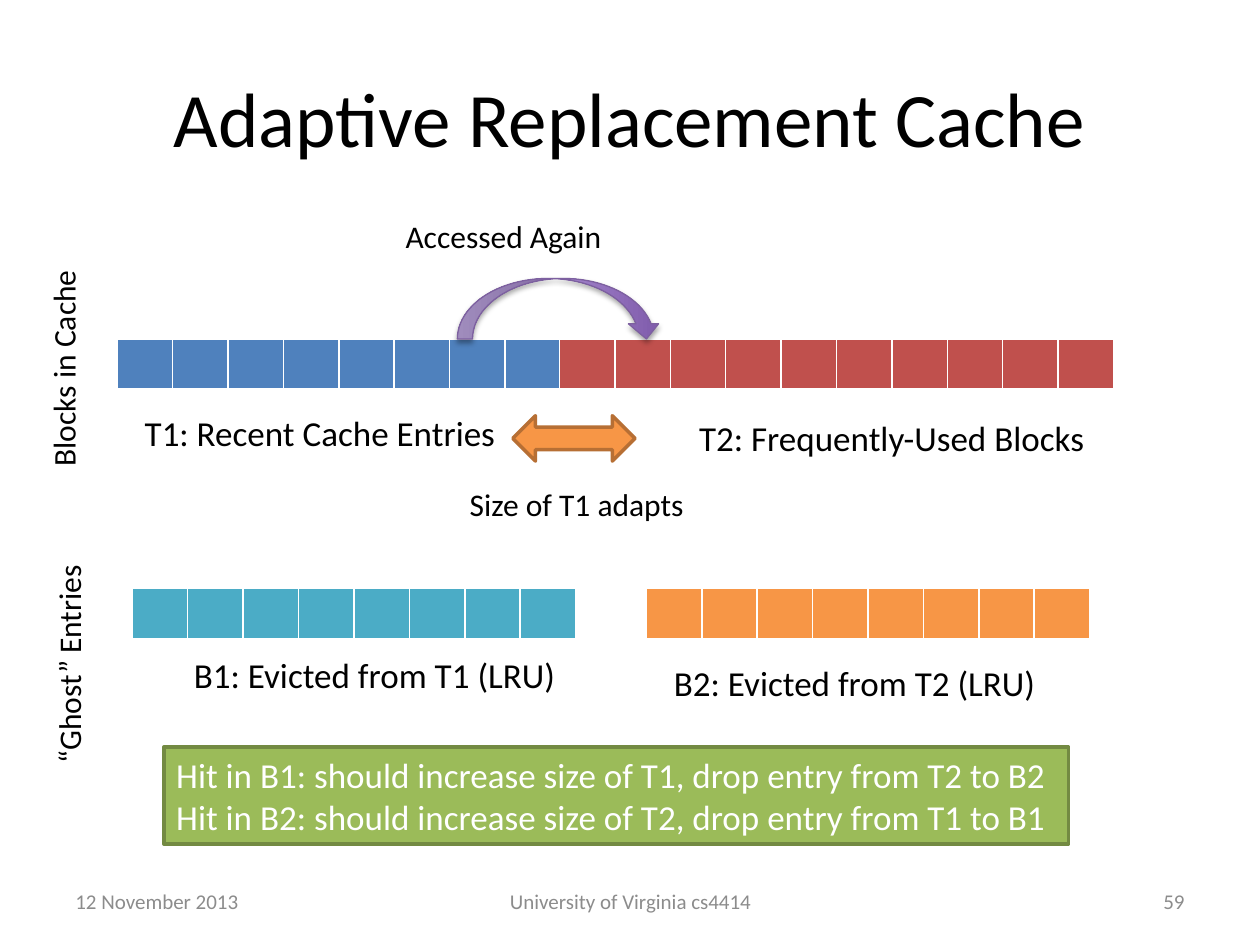
from lxml.etree import SubElement
from pptx import Presentation
from pptx.dml.color import RGBColor
from pptx.enum.shapes import MSO_SHAPE
from pptx.enum.text import MSO_ANCHOR, MSO_AUTO_SIZE, PP_ALIGN
from pptx.oxml import parse_xml
from pptx.oxml.ns import nsdecls, qn
from pptx.util import Inches, Pt

FONT = "Calibri"
BLACK, WHITE, GREY = "000000", "FFFFFF", "8C8C8C"
BLUE, RED, TEAL, ORANGE = "4F81BD", "C0504D", "4BACC6", "F79646"
CELL_W, CELL_H = 0.44, 0.41


def rgb(code):
    return RGBColor.from_string(code)


def style(par, size, color=BLACK, align=PP_ALIGN.LEFT):
    par.alignment = align
    par.font.name = FONT
    par.font.size = Pt(size)
    par.font.color.rgb = rgb(color)


def label(slide, box, text, size, turn=0):
    """Add a one-line label that fits its text."""
    shape = slide.shapes.add_textbox(*map(Inches, box))
    shape.rotation = turn
    frame = shape.text_frame
    frame.word_wrap = False
    frame.auto_size = MSO_AUTO_SIZE.SHAPE_TO_FIT_TEXT
    frame.text = text
    style(frame.paragraphs[0], size)


def edge(cell):
    props = cell._tc.get_or_add_tcPr()
    for side, width in (("L", 1), ("R", 1), ("T", 1), ("B", 3)):
        line = SubElement(props, qn(f"a:ln{side}"), w=str(Pt(width)))
        fill = SubElement(line, qn("a:solidFill"))
        SubElement(fill, qn("a:srgbClr"), val=WHITE)


def blocks(slide, left, top, count, color):
    """Add a row of equal cache blocks."""
    box = (left, top, CELL_W * count, CELL_H)
    table = slide.shapes.add_table(1, count, *map(Inches, box)).table
    for col in table.columns:
        col.width = Inches(CELL_W)
    for cell in table.iter_cells():
        edge(cell)
        cell.fill.solid()
        cell.fill.fore_color.rgb = rgb(color)


def solid(slide, kind, box, fill, line):
    shape = slide.shapes.add_shape(kind, *map(Inches, box))
    shape.shadow.inherit = False
    shape.fill.solid()
    shape.fill.fore_color.rgb = rgb(fill)
    shape.line.color.rgb = rgb(line)
    shape.line.width = Pt(2)
    return shape


def curve(slide, box):
    """Add the curved arrow from T1 to T2."""
    shape = slide.shapes.add_shape(MSO_SHAPE.CURVED_RIGHT_ARROW, *map(Inches, box))
    shape.rotation = 270
    shape.fill.gradient()
    shape.fill.gradient_angle = 90
    for stop, color in zip(shape.fill.gradient_stops, ("7F5BAB", "C8B0ED")):
        stop.color.rgb = rgb(color)
    shape.line.color.rgb = rgb("7D60A0")
    shape.line.width = Pt(0.75)
    shape.shadow.inherit = False
    props = shape._element.spPr
    props.find(qn("a:xfrm")).set("flipH", "1")
    props.find(qn("a:effectLst")).append(parse_xml(
        f'<a:outerShdw {nsdecls("a")} blurRad="{Pt(3.1)}" dist="{Pt(1.8)}" '
        'dir="5400000" rotWithShape="0"><a:srgbClr val="000000">'
        '<a:alpha val="35000"/></a:srgbClr></a:outerShdw>'))


def heading(slide, box, text):
    title = slide.shapes.title
    title.left, title.top, title.width, title.height = map(Inches, box)
    title.text_frame.text = text
    title.text_frame.vertical_anchor = MSO_ANCHOR.MIDDLE
    style(title.text_frame.paragraphs[0], 44, align=PP_ALIGN.CENTER)


def cache(slide, left, top):
    blocks(slide, left, top, 8, BLUE)
    blocks(slide, left + 3.51, top, 10, RED)
    label(slide, (left + 0.12, top + 0.53, 3.02, 0.44), "T1: Recent Cache Entries", 20)
    label(slide, (left + 4.52, top + 0.57, 3.3, 0.44), "T2: Frequently-Used Blocks", 20)
    label(slide, (left + 2.19, top - 1.02, 1.78, 0.4), "Accessed Again", 18)
    curve(slide, (left + 3.27, top - 1.05, 0.48, 1.62))
    solid(slide, MSO_SHAPE.LEFT_RIGHT_ARROW, (left + 3.14, top + 0.61, 0.97, 0.36),
          ORANGE, "B76F34")
    label(slide, (left + 2.7, top + 1.11, 1.93, 0.4), "Size of T1 adapts", 18)
    label(slide, (left - 1.32, top + 0.02, 1.78, 0.4), "Blocks in Cache", 18, 270)


def ghosts(slide, left, top):
    blocks(slide, left, top, 8, TEAL)
    blocks(slide, left + 4.08, top, 8, ORANGE)
    label(slide, (left + 0.39, top + 0.47, 3.11, 0.44), "B1: Evicted from T1 (LRU)", 20)
    label(slide, (left + 4.2, top + 0.53, 3.11, 0.44), "B2: Evicted from T2 (LRU)", 20)
    label(slide, (left - 1.4, top + 0.39, 1.79, 0.4), "“Ghost” Entries", 18, 270)


def rules(slide, box):
    shape = solid(slide, MSO_SHAPE.RECTANGLE, box, "9BBB59", "738A42")
    frame = shape.text_frame
    frame.word_wrap = False
    frame.auto_size = MSO_AUTO_SIZE.SHAPE_TO_FIT_TEXT
    frame.vertical_anchor = MSO_ANCHOR.TOP
    frame.text = ("Hit in B1: should increase size of T1, drop entry from T2 to B2\n"
                  "Hit in B2: should increase size of T2, drop entry from T1 to B1")
    for par in frame.paragraphs:
        style(par, 20, WHITE)


def footer(slide, top):
    for left, width, text, align in (
        (0.5, 2.33, "12 November 2013", PP_ALIGN.LEFT),
        (3.42, 3.17, "University of Virginia cs4414", PP_ALIGN.CENTER),
        (7.17, 2.33, "59", PP_ALIGN.RIGHT),
    ):
        shape = slide.shapes.add_textbox(*map(Inches, (left, top, width, 0.4)))
        frame = shape.text_frame
        frame.word_wrap = True
        frame.vertical_anchor = MSO_ANCHOR.MIDDLE
        frame.text = text
        style(frame.paragraphs[0], 12, GREY, align)


def main():
    deck = Presentation()
    deck.slide_width, deck.slide_height = Inches(10), Inches(7.5)
    slide = deck.slides.add_slide(deck.slide_layouts[5])
    heading(slide, (0.5, 0.3, 9, 1.25), "Adaptive Replacement Cache")
    footer(slide, 6.95)
    cache(slide, 0.93, 2.69)
    ghosts(slide, 1.05, 4.67)
    rules(slide, (1.3, 5.93, 7.18, 0.77))
    deck.save("out.pptx")


if __name__ == "__main__":
    main()
